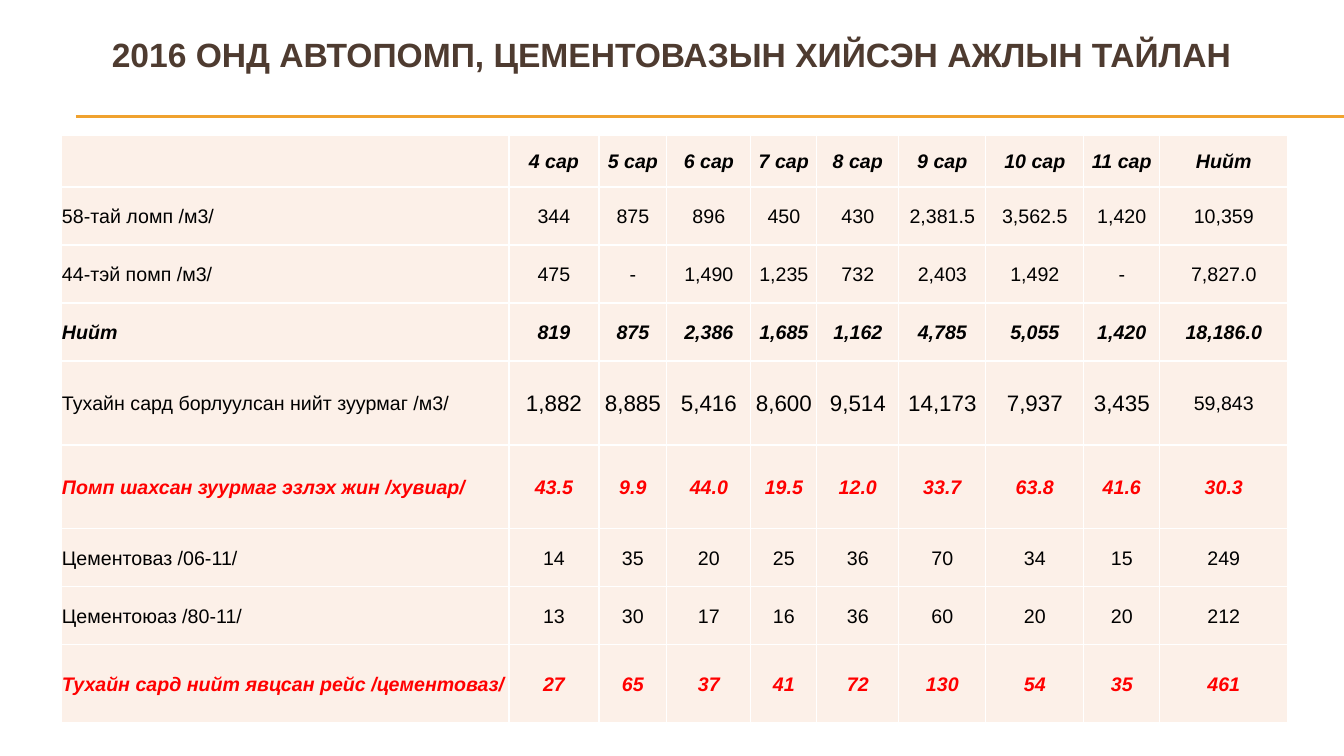
from lxml.etree import SubElement
from pptx import Presentation
from pptx.dml.color import RGBColor
from pptx.enum.shapes import MSO_CONNECTOR
from pptx.enum.text import MSO_ANCHOR, PP_ALIGN
from pptx.oxml.ns import qn
from pptx.util import Pt

EMU_PER_PX = 914400 / 100.8
COLORS = {
    "title": "4E3B30",
    "rule": "F0A22E",
    "cell": "FCF0E8",
    "border": "FFFFFF",
    "body": "000000",
    "accent": "FF0000",
}
COLUMN_WIDTHS = [448, 90, 68, 84, 66, 82, 87, 98, 76, 128]
# Row height, row style, label and the month values followed by the total
REPORT = [
    (52, "strong", ["", *(f"{month} сар" for month in range(4, 12)), "Нийт"]),
    (58, "plain", ["58-тай ломп /м3/", "344", "875", "896", "450", "430",
                   "2,381.5", "3,562.5", "1,420", "10,359"]),
    (58, "plain", ["44-тэй помп /м3/", "475", "-", "1,490", "1,235", "732",
                   "2,403", "1,492", "-", "7,827.0"]),
    (58, "strong", ["Нийт", "819", "875", "2,386", "1,685", "1,162",
                    "4,785", "5,055", "1,420", "18,186.0"]),
    (84, "large", ["Тухайн сард борлуулсан нийт зуурмаг /м3/", "1,882", "8,885",
                   "5,416", "8,600", "9,514", "14,173", "7,937", "3,435", "59,843"]),
    (84, "accent", ["Помп шахсан зуурмаг эзлэх жин /хувиар/", "43.5", "9.9", "44.0",
                    "19.5", "12.0", "33.7", "63.8", "41.6", "30.3"]),
    (58, "plain", ["Цементоваз /06-11/", "14", "35", "20", "25", "36",
                   "70", "34", "15", "249"]),
    (58, "plain", ["Цементоюаз /80-11/", "13", "30", "17", "16", "36",
                   "60", "20", "20", "212"]),
    (78, "accent", ["Тухайн сард нийт явцсан рейс /цементоваз/", "27", "65", "37",
                    "41", "72", "130", "54", "35", "461"]),
]


def px(length):
    return round(length * EMU_PER_PX)


def rgb(name):
    return RGBColor.from_string(COLORS[name])


class ReportSlide:
    font_name = "Arial"

    def __init__(self, presentation):
        self.slide = presentation.slides.add_slide(presentation.slide_layouts[6])

    def style(self, paragraph, size, color, bold=False, italic=False,
              align=PP_ALIGN.CENTER):
        paragraph.alignment = align
        font = paragraph.font
        font.name, font.size = self.font_name, Pt(size)
        font.bold, font.italic = bold, italic
        font.color.rgb = rgb(color)

    def title(self, text, left, top, width, height):
        frame = self.slide.shapes.add_textbox(
            px(left), px(top), px(width), px(height)).text_frame
        frame.word_wrap = True
        frame.vertical_anchor = MSO_ANCHOR.MIDDLE
        frame.text = text
        self.style(frame.paragraphs[0], 24, "title", bold=True)

    def rule(self, left, right, y):
        rule = self.slide.shapes.add_connector(
            MSO_CONNECTOR.STRAIGHT, px(left), px(y), px(right), px(y))
        rule.line.color.rgb = rgb("rule")
        rule.line.width = Pt(0.75)
        SubElement(rule._element.spPr, qn("a:effectLst"))

    def border(self, cell):
        properties = cell._tc.get_or_add_tcPr()
        for side in ("a:lnL", "a:lnR", "a:lnT", "a:lnB"):
            line = SubElement(properties, qn(side), w=str(Pt(1)))
            fill = SubElement(line, qn("a:solidFill"))
            SubElement(fill, qn("a:srgbClr"), val=COLORS["border"])

    def cell(self, cell, text, **text_style):
        cell.margin_left = cell.margin_right = cell.margin_top = px(1)
        cell.margin_bottom = 0
        cell.vertical_anchor = MSO_ANCHOR.MIDDLE
        self.border(cell)
        cell.fill.solid()
        cell.fill.fore_color.rgb = rgb("cell")
        cell.text = text
        self.style(cell.text_frame.paragraphs[0], **text_style)

    def table(self, left, top, widths, rows):
        heights = [height for height, _, _ in rows]
        table = self.slide.shapes.add_table(
            len(rows), len(widths), px(left), px(top),
            px(sum(widths)), px(sum(heights))).table
        for column, width in zip(table.columns, widths):
            column.width = px(width)
        for r, (height, kind, texts) in enumerate(rows):
            table.rows[r].height = px(height)
            emphasis = kind in ("strong", "accent")
            for c, text in enumerate(texts):
                is_month = 0 < c < len(texts) - 1
                self.cell(
                    table.cell(r, c), text,
                    size=16 if kind == "large" and is_month else 14,
                    color="accent" if kind == "accent" else "body",
                    bold=emphasis, italic=emphasis,
                    align=PP_ALIGN.CENTER if c else PP_ALIGN.LEFT)


def main():
    presentation = Presentation()
    presentation.slide_width, presentation.slide_height = px(1344), px(756)
    report = ReportSlide(presentation)
    for y in (116, 117):
        report.rule(76, 1344, y)
    report.table(61, 135, COLUMN_WIDTHS, REPORT)
    report.title("2016 ОНД АВТОПОМП, ЦЕМЕНТОВАЗЫН ХИЙСЭН АЖЛЫН ТАЙЛАН",
                 39, 25, 1265, 58)
    presentation.save("out.pptx")


if __name__ == "__main__":
    main()
